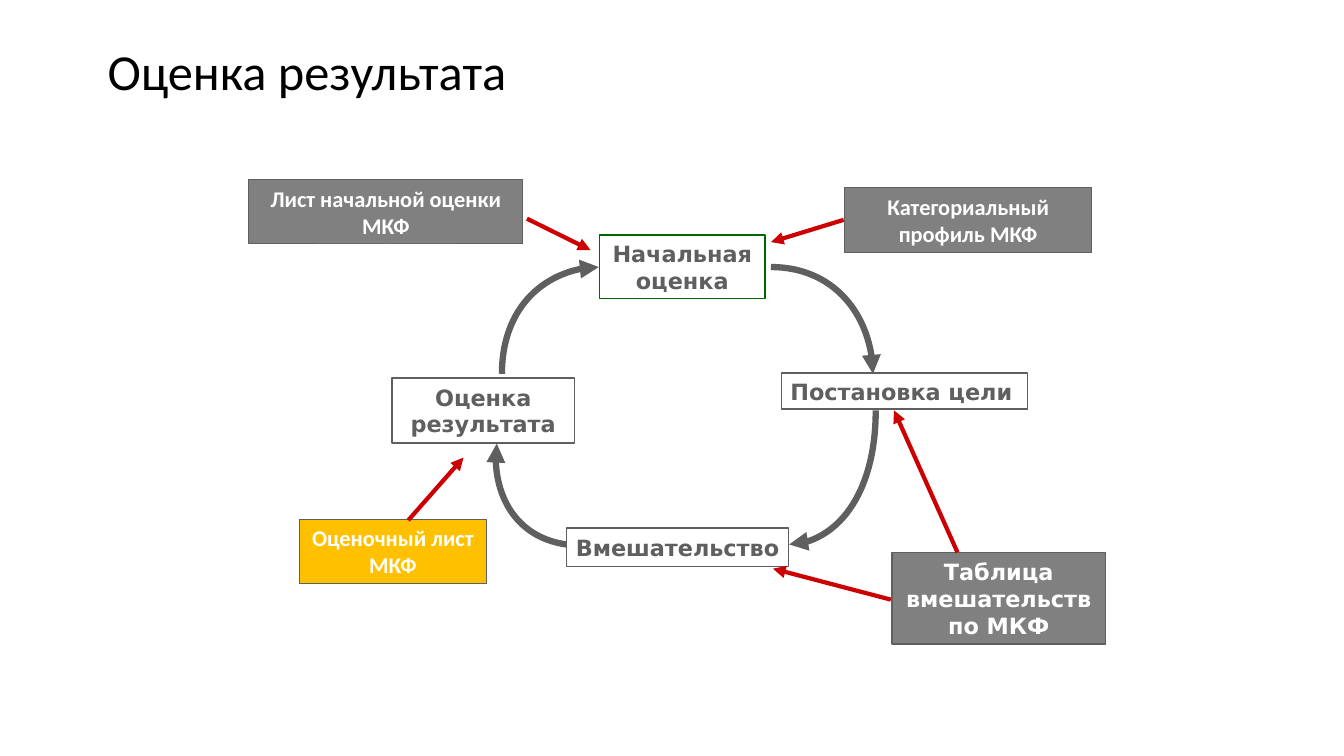
from lxml.etree import SubElement
from pptx import Presentation
from pptx.dml.color import RGBColor
from pptx.enum.shapes import MSO_CONNECTOR as Connector, MSO_SHAPE as Shape
from pptx.enum.text import MSO_ANCHOR as Anchor, PP_ALIGN as Align
from pptx.oxml.ns import qn
from pptx.util import Cm, Pt

COLORS = {
    "black": "000000",
    "white": "FFFFFF",
    "gray": "5F5F5F",
    "panel": "808080",
    "green": "006600",
    "amber": "FFC000",
    "red": "CC0000",
}
HEADING_FONT, STAGE_FONT = "Calibri", "DejaVu Sans"

STAGES = [
    ("Начальная\vоценка", (15.11, 5.92, 4.17, 1.6), "green", Align.CENTER),
    ("Постановка цели", (19.69, 9.4, 6.2, 0.91), "gray", Align.LEFT),
    ("Вмешательство", (14.27, 13.31, 5.61, 0.97), "gray", Align.CENTER),
    ("Оценка результата", (9.88, 9.53, 4.6, 1.63), "gray", Align.CENTER),
]
DOCUMENTS = [
    ("Категориальный профиль МКФ", (21.29, 4.72, 6.22, 1.65), "panel", HEADING_FONT),
    ("Лист начальной оценки МКФ", (6.27, 4.52, 6.91, 1.63), "panel", HEADING_FONT),
    ("Таблица вмешательств по МКФ", (22.48, 13.92, 5.38, 2.31), "panel", STAGE_FONT),
    ("Оценочный лист МКФ", (7.54, 13.08, 4.72, 1.63), "amber", HEADING_FONT),
]
CYCLE_CURVES = [
    [(12.65, 9.42), (12.65, 7.92), (13.74, 6.73), (15.09, 6.73)],
    [(19.43, 6.73), (20.85, 6.73), (22, 7.92), (22, 9.42)],
    [(22.07, 10.34), (22.07, 12.19), (21.11, 13.72), (19.89, 13.72)],
    [(14.27, 13.72), (13.13, 13.56), (12.34, 12.42), (12.52, 11.18)],
]
DOCUMENT_ARROWS = [
    (13.28, 5.51, 14.88, 6.3),
    (21.26, 5.54, 19.43, 6.1),
    (22.45, 15.11, 19.48, 14.33),
    (24.13, 13.92, 22.53, 10.34),
    (10.29, 13.11, 11.68, 11.53),
]


def rgb(name):
    """Return the named colour."""
    return RGBColor.from_string(COLORS[name])


def write_text(frame, text, font=HEADING_FONT, size=16, color="black", bold=False,
               align=Align.LEFT, spacing=1.0):
    """Fill a text frame with one formatted paragraph."""
    frame.word_wrap = True
    frame.vertical_anchor = Anchor.MIDDLE
    paragraph = frame.paragraphs[0]
    paragraph.text = text
    paragraph.alignment = align
    paragraph.line_spacing = spacing
    for run in paragraph.runs:
        run.font.name = font
        run.font.size = Pt(size)
        run.font.bold = bold
        run.font.color.rgb = rgb(color)


def set_line(shape, color, width):
    """Set the outline colour and width in points."""
    shape.line.color.rgb = rgb(color)
    shape.line.width = Pt(width)


def add_arrowhead(shape):
    """Put a triangle at the end of a line."""
    properties = shape.line._get_or_add_ln()
    SubElement(properties, qn("a:tailEnd"), type="triangle")


def add_box(slide, text, place, border, width, fill=None, **text_format):
    """Add an outlined rectangle with text."""
    shape = slide.shapes.add_shape(Shape.RECTANGLE, *map(Cm, place))
    shape.shadow.inherit = False
    if fill:
        shape.fill.solid()
        shape.fill.fore_color.rgb = rgb(fill)
    else:
        shape.fill.background()
    set_line(shape, border, width)
    frame = shape.text_frame
    frame.margin_left = frame.margin_right = Cm(0.23)
    frame.margin_top = frame.margin_bottom = Cm(0.12)
    write_text(frame, text, bold=True, **text_format)


def add_curve(slide, points):
    """Add a curved arrow through Bezier control points."""
    start, *controls = [(Cm(x), Cm(y)) for x, y in points]
    builder = slide.shapes.build_freeform(*start)
    builder.add_line_segments(controls, close=False)
    shape = builder.convert_to_shape()
    path = shape._element.find(".//" + qn("a:path"))
    segments = path.findall(qn("a:lnTo"))
    curve = SubElement(path, qn("a:cubicBezTo"))
    for segment in segments:
        curve.append(segment[0])
        path.remove(segment)
    shape.shadow.inherit = False
    shape.fill.background()
    set_line(shape, "gray", 4.5)
    add_arrowhead(shape)


def add_arrow(slide, ends):
    """Add a straight red arrow."""
    connector = slide.shapes.add_connector(Connector.STRAIGHT, *map(Cm, ends))
    set_line(connector, "red", 3)
    add_arrowhead(connector)
    SubElement(connector._element.spPr, qn("a:effectLst"))


def add_title(slide, text):
    """Place and format the title."""
    title = slide.shapes.title
    title.left, title.top, title.width, title.height = map(Cm, (2.46, 0.03, 29.21, 3.68))
    write_text(title.text_frame, text, size=36, spacing=0.9)


def main():
    """Build and save the slide."""
    presentation = Presentation()
    presentation.slide_width, presentation.slide_height = Cm(33.87), Cm(19.05)
    slide = presentation.slides.add_slide(presentation.slide_layouts[5])
    add_title(slide, "Оценка результата")
    for text, place, border, align in STAGES:
        add_box(slide, text, place, border, 1, font=STAGE_FONT, color="gray", align=align)
    for points in CYCLE_CURVES:
        add_curve(slide, points)
    for text, place, fill, font in DOCUMENTS:
        add_box(slide, text, place, "gray", 0.75, fill, font=font, color="white",
                align=Align.CENTER)
    for ends in DOCUMENT_ARROWS:
        add_arrow(slide, ends)
    presentation.save("out.pptx")


if __name__ == "__main__":
    main()
